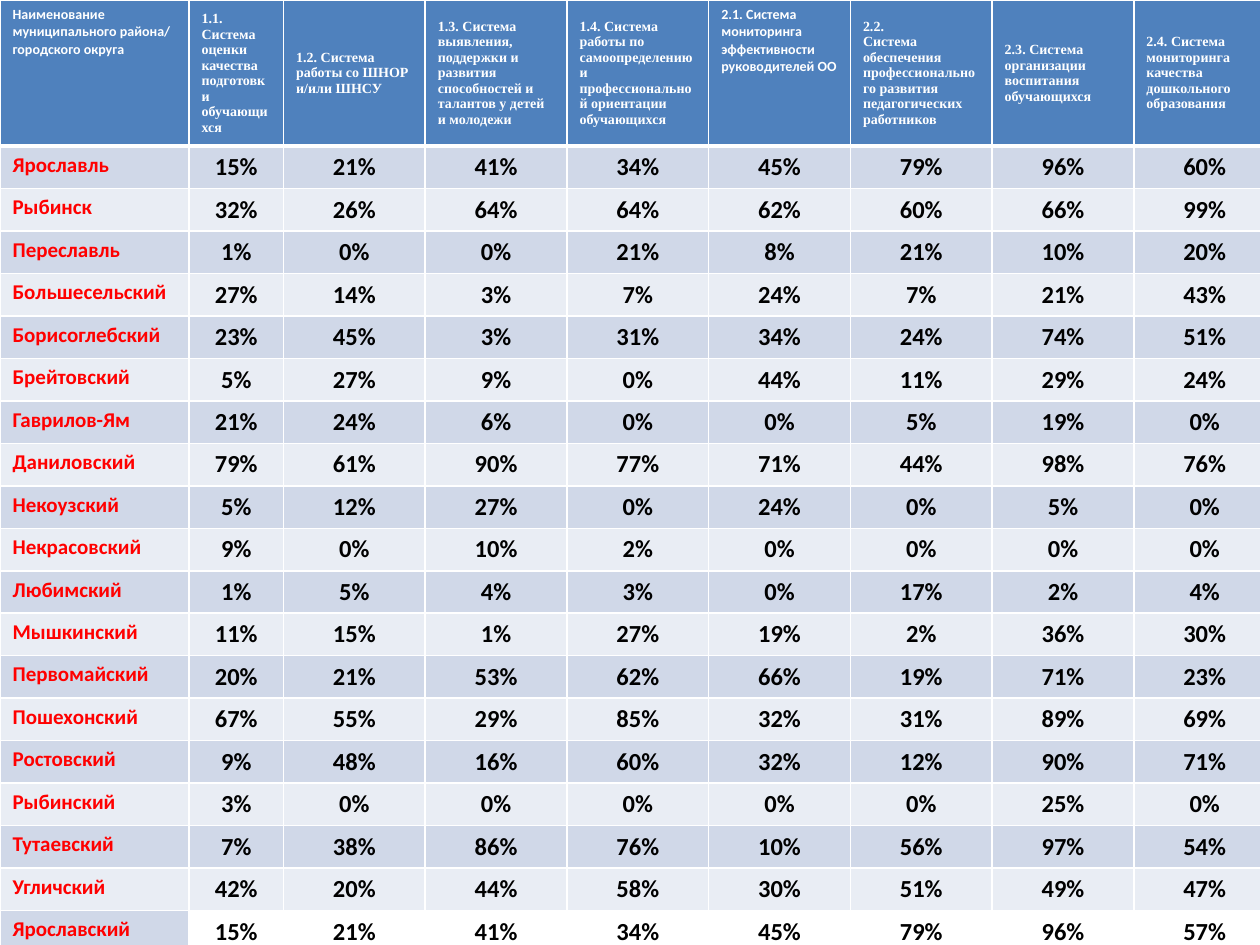
from lxml.etree import SubElement
from pptx import Presentation
from pptx.dml.color import RGBColor as Color
from pptx.enum.text import MSO_ANCHOR as Anchor, PP_ALIGN as Align
from pptx.oxml.ns import qn
from pptx.util import Inches, Pt

COLORS = {
    "header": "4F81BD",
    "band_dark": "D0D8E8",
    "band_light": "E9EDF4",
    "white": "FFFFFF",
    "district": "FF0000",
    "value": "000000",
}
SANS, SERIF = "Calibri", "Times New Roman"

HEADERS = [
    ("Наименование муниципального района/ городского округа", SANS),
    ("1.1. Система оценки качества подготовки обучающихся", SERIF),
    ("1.2. Система работы со ШНОР и/или ШНСУ", SERIF),
    ("1.3. Система выявления, поддержки и развития способностей и талантов у детей и молодежи", SERIF),
    ("1.4. Система работы по самоопределению и профессиональной ориентации обучающихся", SERIF),
    ("2.1. Система мониторинга эффективности руководителей ОО", SANS),
    ("2.2.\nСистема обеспечения профессионального развития педагогических работников", SERIF),
    ("2.3. Система организации воспитания обучающихся", SERIF),
    ("2.4. Система мониторинга качества дошкольного образования", SERIF),
]
DISTRICTS = [
    ("Ярославль", 15, 21, 41, 34, 45, 79, 96, 60),
    ("Рыбинск", 32, 26, 64, 64, 62, 60, 66, 99),
    ("Переславль", 1, 0, 0, 21, 8, 21, 10, 20),
    ("Большесельский", 27, 14, 3, 7, 24, 7, 21, 43),
    ("Борисоглебский", 23, 45, 3, 31, 34, 24, 74, 51),
    ("Брейтовский", 5, 27, 9, 0, 44, 11, 29, 24),
    ("Гаврилов-Ям", 21, 24, 6, 0, 0, 5, 19, 0),
    ("Даниловский", 79, 61, 90, 77, 71, 44, 98, 76),
    ("Некоузский", 5, 12, 27, 0, 24, 0, 5, 0),
    ("Некрасовский", 9, 0, 10, 2, 0, 0, 0, 0),
    ("Любимский", 1, 5, 4, 3, 0, 17, 2, 4),
    ("Мышкинский", 11, 15, 1, 27, 19, 2, 36, 30),
    ("Первомайский", 20, 21, 53, 62, 66, 19, 71, 23),
    ("Пошехонский", 67, 55, 29, 85, 32, 31, 89, 69),
    ("Ростовский", 9, 48, 16, 60, 32, 12, 90, 71),
    ("Рыбинский", 3, 0, 0, 0, 0, 0, 25, 0),
    ("Тутаевский", 7, 38, 86, 76, 10, 56, 97, 54),
    ("Угличский", 42, 20, 44, 58, 30, 51, 49, 47),
    ("Ярославский", 15, 21, 41, 34, 45, 79, 96, 57),
]
COLUMN_WIDTHS = [1.5, 0.75] + [1.125] * 7
ROW_HEIGHTS = [1.16] + [0.333] * (len(DISTRICTS) - 1) + [0.46]


def add_borders(cell, bottom=1, top=1):
    properties = cell._tc.get_or_add_tcPr()
    for side, width in (("L", 1), ("R", 1), ("T", top), ("B", bottom)):
        line = SubElement(properties, qn(f"a:ln{side}"), w=str(Pt(width)))
        fill = SubElement(line, qn("a:solidFill"))
        SubElement(fill, qn("a:srgbClr"), val=COLORS["white"])


def fill_cell(cell, text, size, color, fill, font=SANS, align=Align.LEFT):
    cell.text = text
    if fill:
        cell.fill.solid()
        cell.fill.fore_color.rgb = Color.from_string(COLORS[fill])
    else:
        cell.fill.background()
    for para in cell.text_frame.paragraphs:
        para.alignment = align
        para.font.name = font
        para.font.size = Pt(size)
        para.font.bold = True
        para.font.color.rgb = Color.from_string(COLORS[color])


deck = Presentation()
deck.slide_width, deck.slide_height = Inches(10), Inches(7.5)
page = deck.slides.add_slide(deck.slide_layouts[6])
table = page.shapes.add_table(
    len(ROW_HEIGHTS), len(COLUMN_WIDTHS), Inches(0), Inches(0),
    Inches(sum(COLUMN_WIDTHS)), Inches(sum(ROW_HEIGHTS)),
).table
for column, width in zip(table.columns, COLUMN_WIDTHS):
    column.width = Inches(width)
for row, height in zip(table.rows, ROW_HEIGHTS):
    row.height = Inches(height)
table.horz_banding = False

for index, (title, font) in enumerate(HEADERS):
    cell = table.cell(0, index)
    add_borders(cell, bottom=3)
    fill_cell(cell, title, 8, "white", "header", font)
    if font == SERIF:
        cell.vertical_anchor = Anchor.MIDDLE

for number, (district, *values) in enumerate(DISTRICTS, start=1):
    band = "band_dark" if number % 2 else "band_light"
    value_band = None if number == len(DISTRICTS) else band
    for cell in table.rows[number].cells:
        add_borders(cell, top=3 if number == 1 else 1)
    fill_cell(table.cell(number, 0), district, 12, "district", band)
    for index, value in enumerate(values, start=1):
        fill_cell(table.cell(number, index), f"{value}%", 14, "value", value_band, align=Align.CENTER)

deck.save("out.pptx")
